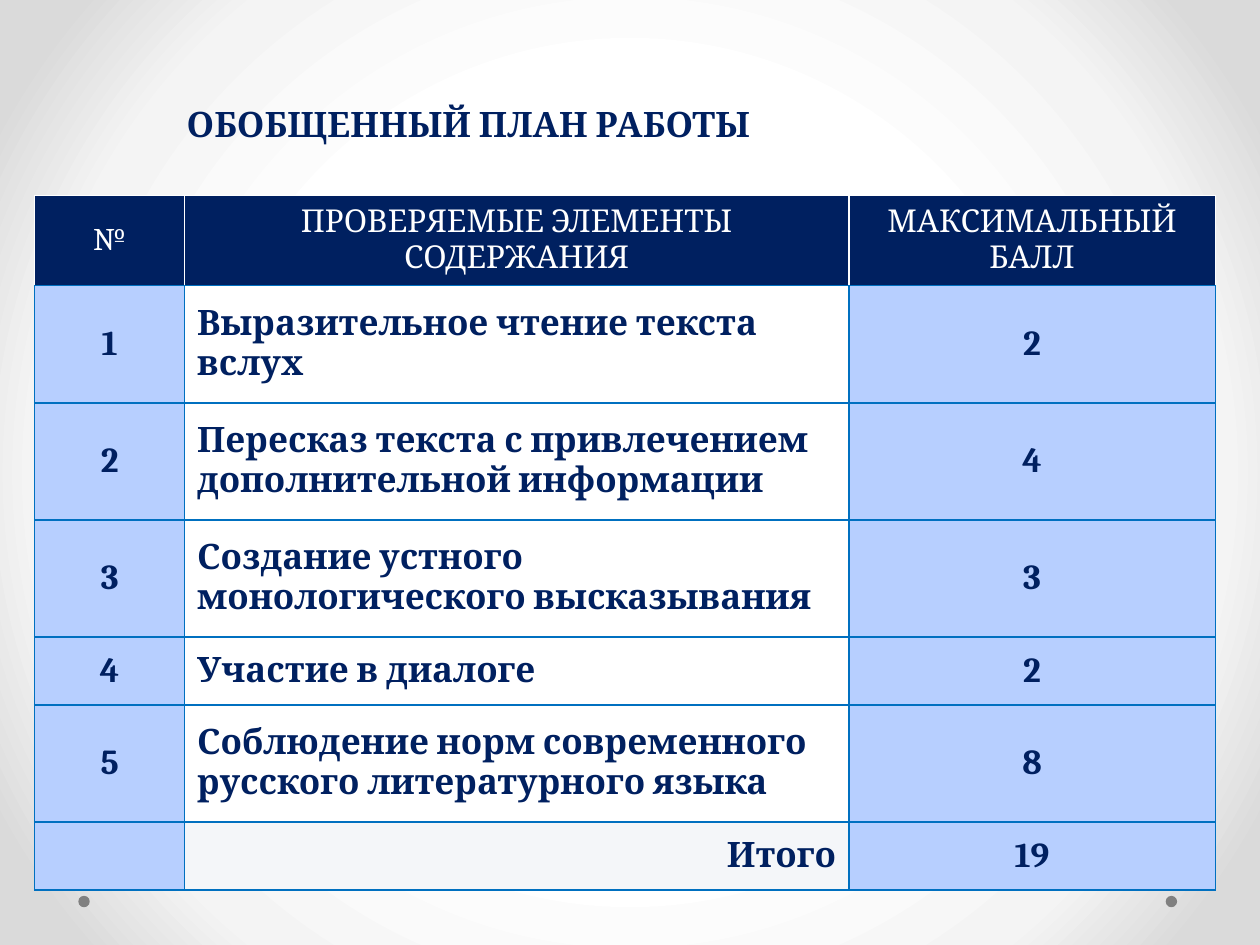
from lxml import etree
from pptx import Presentation
from pptx.dml.color import RGBColor
from pptx.enum.shapes import MSO_SHAPE as Shape
from pptx.enum.text import MSO_ANCHOR as Anchor, MSO_AUTO_SIZE as AutoSize, PP_ALIGN as Align
from pptx.oxml import parse_xml
from pptx.oxml.ns import nsdecls, qn
from pptx.util import Cm, Pt

NAVY = RGBColor(0x00, 0x20, 0x60)
BLUE = RGBColor(0x00, 0x70, 0xC0)
PALE_BLUE = RGBColor(0xB7, 0xCF, 0xFF)
OFF_WHITE = RGBColor(0xF4, 0xF6, 0xF9)
WHITE = RGBColor(0xFF, 0xFF, 0xFF)
GRAY = RGBColor(0x80, 0x80, 0x80)
LIGHT_GRAY = RGBColor(0xF4, 0xF4, 0xF4)
MID_GRAY = RGBColor(0xDA, 0xDA, 0xDA)
FONT = "Cambria"


def add_run(paragraph, text, size, color, bold):
    run = paragraph.add_run()
    run.text = text
    run.font.name = FONT
    run.font.size = Pt(size)
    run.font.bold = bold
    run.font.color.rgb = color


def add_border(cell, side, color):
    line = etree.SubElement(cell._tc.get_or_add_tcPr(), qn(f"a:ln{side}"), w=str(Pt(1)))
    fill = etree.SubElement(line, qn("a:solidFill"))
    etree.SubElement(fill, qn("a:srgbClr"), val=str(color))


presentation = Presentation()
presentation.slide_width = Cm(25.4)
presentation.slide_height = Cm(19.05)
slide = presentation.slides.add_slide(presentation.slide_layouts[5])

slide.background.fill.solid()
background = slide._element.cSld.bg.bgPr
stops = "".join(
    f'<a:gs pos="{position}000"><a:srgbClr val="{color}"/></a:gs>'
    for position, color in [(50, WHITE), (76, LIGHT_GRAY), (92, MID_GRAY)]
)
background.replace(background[0], parse_xml(
    f'<a:gradFill {nsdecls("a")} rotWithShape="1"><a:gsLst>{stops}</a:gsLst>'
    '<a:path path="circle"><a:fillToRect l="50000" t="50000" r="50000" b="50000"/></a:path>'
    '</a:gradFill>'
))

for left in (23.5, 1.58):
    dot = slide.shapes.add_shape(Shape.OVAL, Cm(left), Cm(18.06), Cm(0.23), Cm(0.23))
    dot.shadow.inherit = False
    dot.fill.solid()
    dot.fill.fore_color.rgb = GRAY
    dot.line.fill.background()

title = slide.shapes.title
title.left, title.top, title.width, title.height = Cm(3.76), Cm(1.12), Cm(18.34), Cm(1.55)
frame = title.text_frame
frame.margin_left = frame.margin_top = frame.margin_right = frame.margin_bottom = 0
frame.vertical_anchor = Anchor.MIDDLE
frame.auto_size = AutoSize.NONE
frame.word_wrap = True
paragraph = frame.paragraphs[0]
paragraph.alignment = Align.LEFT
paragraph.line_spacing = Pt(58)
add_run(paragraph, "ОБОБЩЕННЫЙ ПЛАН РАБОТЫ", 20, NAVY, True)

rows = [
    ("№", ["ПРОВЕРЯЕМЫЕ ЭЛЕМЕНТЫ СОДЕРЖАНИЯ"], "МАКСИМАЛЬНЫЙ БАЛЛ"),
    ("1", ["Выразительное чтение текста", "вслух"], "2"),
    ("2", ["Пересказ текста с привлечением", "дополнительной информации"], "4"),
    ("3", ["Создание устного", "монологического высказывания"], "3"),
    ("4", ["Участие в диалоге"], "2"),
    ("5", ["Соблюдение норм современного", "русского литературного языка"], "8"),
    ("", ["Итого"], "19"),
]
column_widths = [Cm(3.02), Cm(13.39), Cm(7.39)]
row_heights = [Cm(1.82)] + [Cm(2.36 if len(lines) == 2 else 1.37) for _, lines, _ in rows[1:]]
table = slide.shapes.add_table(
    len(rows), len(column_widths), Cm(0.7), Cm(3.94), sum(column_widths), sum(row_heights)
).table
for column, width in zip(table.columns, column_widths):
    column.width = width
for row, height in zip(table.rows, row_heights):
    row.height = height

last_row = len(rows) - 1
for row_index, (number, lines, score) in enumerate(rows):
    header = row_index == 0
    for column_index, texts in enumerate([[number], lines, [score]]):
        cell = table.cell(row_index, column_index)
        cell.vertical_anchor = Anchor.MIDDLE
        for side in "LRTB":
            add_border(cell, side, WHITE if header and side != "B" else BLUE)

        content = column_index == 1
        alignment = Align.CENTER
        fill_color = NAVY if header else PALE_BLUE
        if content and not header:
            alignment = Align.RIGHT if row_index == last_row else Align.LEFT
            fill_color = OFF_WHITE if row_index == last_row else WHITE
        cell.fill.solid()
        cell.fill.fore_color.rgb = fill_color

        for index, text in enumerate(texts):
            frame = cell.text_frame
            paragraph = frame.add_paragraph() if index else frame.paragraphs[0]
            paragraph.alignment = alignment
            if text:
                add_run(paragraph, text, 18 if header else 20, WHITE if header else NAVY, not header)

presentation.save("out.pptx")
